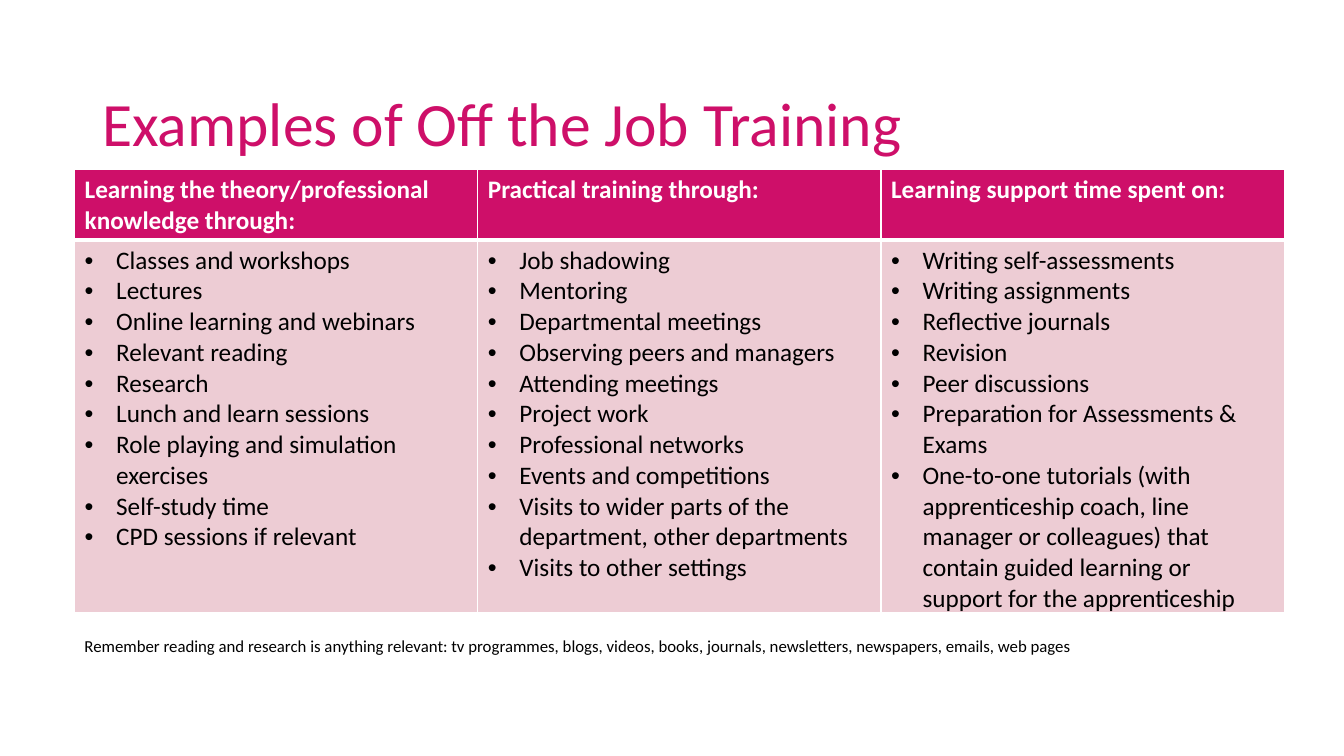
import pptx
import pptx.dml.color
import pptx.enum.text
import pptx.oxml.ns
import pptx.util
from lxml import etree

Pt = pptx.util.Pt
FONT = "Calibri"
MAGENTA = "CE0F69"
PINK = "EDCCD4"
WHITE = "FFFFFF"
BLACK = "000000"

TABLE_LEFT = 53.3
COLUMN_WIDTH = 288
HEADER_HEIGHT = 47.5
BODY_HEIGHT = 249
BULLET_INDENT = 22.5

TRAINING = {
    "Learning the theory/professional knowledge through:": [
        "Classes and workshops",
        "Lectures",
        "Online learning and webinars",
        "Relevant reading",
        "Research",
        "Lunch and learn sessions",
        "Role playing and simulation exercises",
        "Self-study time",
        "CPD sessions if relevant",
    ],
    "Practical training through:": [
        "Job shadowing",
        "Mentoring",
        "Departmental meetings",
        "Observing peers and managers",
        "Attending meetings",
        "Project work",
        "Professional networks",
        "Events and competitions",
        "Visits to wider parts of the department, other departments",
        "Visits to other settings",
    ],
    "Learning support time spent on:": [
        "Writing self-assessments",
        "Writing assignments",
        "Reflective journals",
        "Revision",
        "Peer discussions",
        "Preparation for Assessments & Exams",
        "One-to-one tutorials (with apprenticeship coach, line manager or "
        "colleagues) that contain guided learning or support for the apprenticeship",
    ],
}


def rgb(value):
    return pptx.dml.color.RGBColor.from_string(value)


def add_element(parent, tag, **attributes):
    element = etree.SubElement(parent, pptx.oxml.ns.qn(tag))
    for name, value in attributes.items():
        element.set(name, str(value))
    return element


def format_text(para, size, color, bold=False):
    for span in para.runs:
        span.font.name = FONT
        span.font.size = Pt(size)
        span.font.bold = bold
        span.font.color.rgb = rgb(color)


def add_text(page, text, left, top, width, height, size, color):
    box = page.shapes.add_textbox(Pt(left), Pt(top), Pt(width), Pt(height))
    box.text_frame.word_wrap = True
    box.text_frame.text = text
    format_text(box.text_frame.paragraphs[0], size, color)
    return box


def add_bullet(para):
    properties = para._p.get_or_add_pPr()
    properties.set("marL", str(Pt(BULLET_INDENT)))
    properties.set("indent", str(-Pt(BULLET_INDENT)))
    add_element(properties, "a:buFont", typeface="Arial")
    add_element(properties, "a:buChar", char="•")


def style_cell(cell, fill, top, bottom):
    """Set white borders, with the top and bottom widths given, and the fill."""
    properties = cell._tc.get_or_add_tcPr()
    for side, width in (("L", 1), ("R", 1), ("T", top), ("B", bottom)):
        line = add_element(properties, f"a:ln{side}", w=Pt(width))
        add_element(add_element(line, "a:solidFill"), "a:srgbClr", val=WHITE)
    cell.fill.solid()
    cell.fill.fore_color.rgb = rgb(fill)


def fill_header(cell, heading):
    style_cell(cell, MAGENTA, top=1, bottom=3)
    cell.text_frame.text = heading
    format_text(cell.text_frame.paragraphs[0], 18, WHITE, bold=True)


def fill_list(cell, examples):
    style_cell(cell, PINK, top=3, bottom=1)
    cell.text_frame.text = "\n".join(examples)
    for para in cell.text_frame.paragraphs:
        add_bullet(para)
        format_text(para, 18, BLACK)


def add_training_table(page):
    count = len(TRAINING)
    frame = page.shapes.add_table(
        2, count, Pt(TABLE_LEFT), Pt(121),
        Pt(COLUMN_WIDTH * count), Pt(HEADER_HEIGHT + BODY_HEIGHT))
    table = frame.table
    table.rows[0].height = Pt(HEADER_HEIGHT)
    table.rows[1].height = Pt(BODY_HEIGHT)
    for column, (heading, examples) in enumerate(TRAINING.items()):
        table.columns[column].width = Pt(COLUMN_WIDTH)
        fill_header(table.cell(0, column), heading)
        fill_list(table.cell(1, column), examples)


def main():
    deck = pptx.Presentation()
    deck.slide_width, deck.slide_height = Pt(960), Pt(540)
    page = deck.slides.add_slide(deck.slide_layouts[6])

    title = add_text(page, "Examples of Off the Job Training",
                     66, 38.2, 828, 104.4, 44, MAGENTA)
    title.text_frame.vertical_anchor = pptx.enum.text.MSO_ANCHOR.MIDDLE
    title.text_frame.paragraphs[0].line_spacing = 0.9

    add_training_table(page)
    add_text(page, "Remember reading and research is anything relevant: tv programmes, "
             "blogs, videos, books, journals, newsletters, newspapers, emails, web pages",
             TABLE_LEFT, 450.7, 864, 21.8, 12, BLACK)
    deck.save("out.pptx")


if __name__ == "__main__":
    main()
